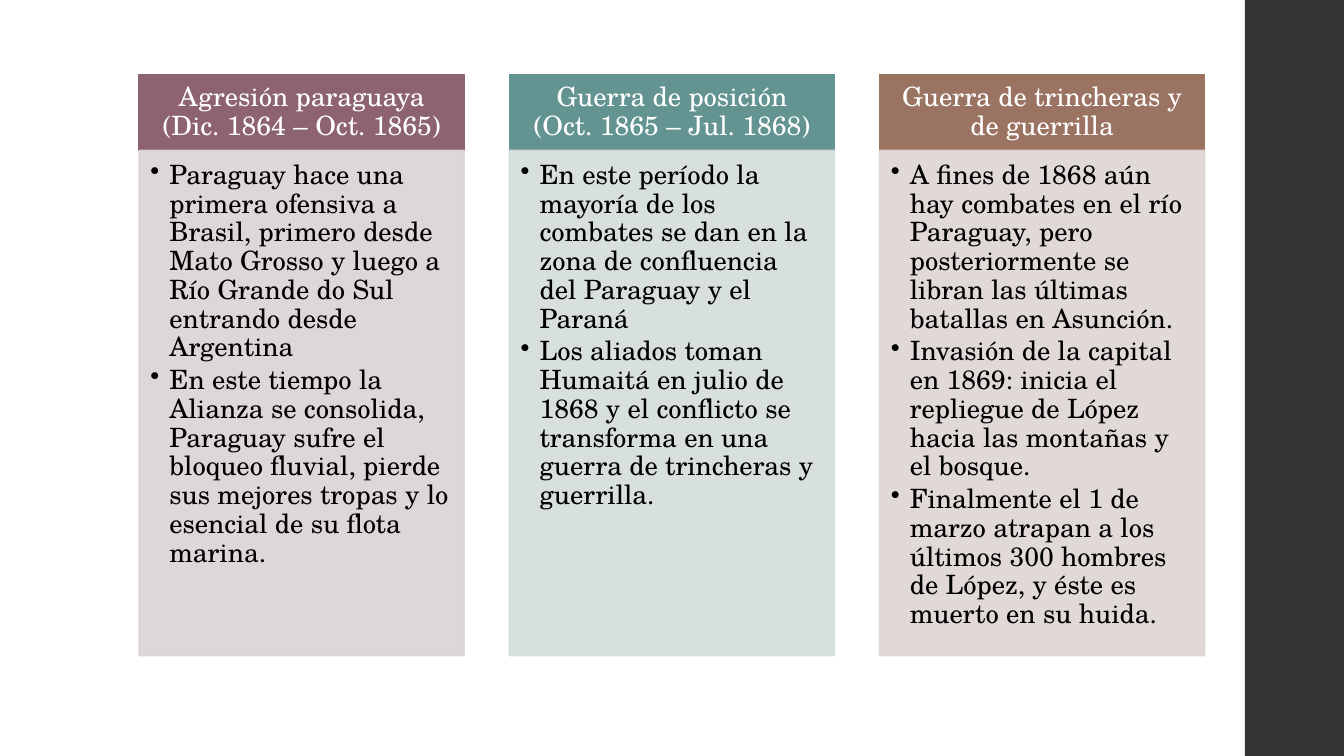
from lxml.etree import SubElement
from pptx import Presentation
from pptx.dml.color import RGBColor
from pptx.enum.shapes import MSO_SHAPE
from pptx.enum.text import MSO_ANCHOR, PP_ALIGN
from pptx.oxml.ns import qn
from pptx.util import Cm, Pt

PHASES = [
    {
        "title": "Agresión paraguaya (Dic. 1864 – Oct. 1865)",
        "colors": ("8D6374", "DBD3D6"),
        "points": [
            "Paraguay hace una primera ofensiva a Brasil, primero desde Mato Grosso "
            "y luego a Río Grande do Sul entrando desde Argentina",
            "En este tiempo la Alianza se consolida, Paraguay sufre el bloqueo fluvial, "
            "pierde sus mejores tropas y lo esencial de su flota marina.",
        ],
    },
    {
        "title": "Guerra de posición (Oct. 1865 – Jul. 1868)",
        "colors": ("639491", "D3DCDC"),
        "points": [
            "En este período la mayoría de los combates se dan en la zona de "
            "confluencia del Paraguay y el Paraná",
            "Los aliados toman Humaitá en julio de 1868 y el conflicto se transforma "
            "en una guerra de trincheras y guerrilla.",
        ],
    },
    {
        "title": "Guerra de trincheras y de guerrilla",
        "colors": ("9B7362", "DED5D3"),
        "points": [
            "A fines de 1868 aún hay combates en el río Paraguay, pero posteriormente "
            "se libran las últimas batallas en Asunción.",
            "Invasión de la capital en 1869: inicia el repliegue de López hacia las "
            "montañas y el bosque.",
            "Finalmente el 1 de marzo atrapan a los últimos 300 hombres de López, "
            "y éste es muerto en su huida.",
        ],
    },
]

FONT, SIZE = "TeX Gyre Schola", 19
SLIDE_WIDTH, SLIDE_HEIGHT = 33.87, 19.05
SIDEBAR_LEFT = 31.37
FIRST_LEFT, COLUMN_STEP, COLUMN_WIDTH = 3.51, 9.33, 8.19
HEADER_TOP, HEADER_HEIGHT, BODY_HEIGHT = 1.88, 1.91, 12.73
HEADER_INSETS = (0.38, 0.2, 0.38, 0.2)
BODY_INSETS = (0.28, 0.28, 0.38, 0.43)
BULLET_INDENT = 0.48


def rgb(value):
    return RGBColor.from_string(value)


def set_opacity(fill_parent, percent):
    color = fill_parent.find(qn("a:solidFill")).find(qn("a:srgbClr"))
    SubElement(color, qn("a:alpha"), val=str(percent * 1000))


def add_box(page, left, top, width, height, color, outlined=True):
    box = page.shapes.add_shape(
        MSO_SHAPE.RECTANGLE, Cm(left), Cm(top), Cm(width), Cm(height))
    box.shadow.inherit = False
    box.fill.solid()
    box.fill.fore_color.rgb = rgb(color)
    if outlined:
        box.line.color.rgb = rgb(color)
        box.line.width = Pt(1.1)
    else:
        box.line.fill.background()
    return box


def write(box, texts, color, anchor, alignment, insets, space_ratio):
    frame = box.text_frame
    frame.word_wrap = True
    frame.vertical_anchor = anchor
    (frame.margin_left, frame.margin_top,
     frame.margin_right, frame.margin_bottom) = map(Cm, insets)
    for index, text in enumerate(texts):
        para = frame.add_paragraph() if index else frame.paragraphs[0]
        para.text = text
        para.alignment = alignment
        para.line_spacing = 0.9
        para.space_after = Pt(round(SIZE * space_ratio, 1))
        para.font.name = FONT
        para.font.size = Pt(SIZE)
        para.font.color.rgb = rgb(color)


def add_bullet(para):
    properties = para._p.get_or_add_pPr()
    properties.set("marL", str(Cm(BULLET_INDENT)))
    properties.set("indent", str(-Cm(BULLET_INDENT)))
    bullet = properties.makeelement(qn("a:buChar"), {"char": "•"})
    properties.insert_element_before(bullet, "a:tabLst", "a:defRPr", "a:extLst")


def add_phase(page, phase, left):
    header_color, body_color = phase["colors"]
    header = add_box(page, left, HEADER_TOP, COLUMN_WIDTH, HEADER_HEIGHT, header_color)
    write(header, [phase["title"]], "FFFFFF", MSO_ANCHOR.MIDDLE, PP_ALIGN.CENTER,
          HEADER_INSETS, 0.35)

    body = add_box(page, left, HEADER_TOP + HEADER_HEIGHT, COLUMN_WIDTH, BODY_HEIGHT,
                   body_color)
    properties = body._element.spPr
    for fill_parent in (properties, properties.find(qn("a:ln"))):
        set_opacity(fill_parent, 90)
    write(body, phase["points"], "000000", MSO_ANCHOR.TOP, PP_ALIGN.LEFT,
          BODY_INSETS, 0.15)
    for para in body.text_frame.paragraphs:
        add_bullet(para)


def main():
    deck = Presentation()
    deck.slide_width, deck.slide_height = Cm(SLIDE_WIDTH), Cm(SLIDE_HEIGHT)
    page = deck.slides.add_slide(deck.slide_layouts[6])
    add_box(page, SIDEBAR_LEFT, 0, SLIDE_WIDTH - SIDEBAR_LEFT, SLIDE_HEIGHT,
            "353537", outlined=False)
    for column, phase in enumerate(PHASES):
        add_phase(page, phase, FIRST_LEFT + column * COLUMN_STEP)
    deck.save("out.pptx")


if __name__ == "__main__":
    main()
